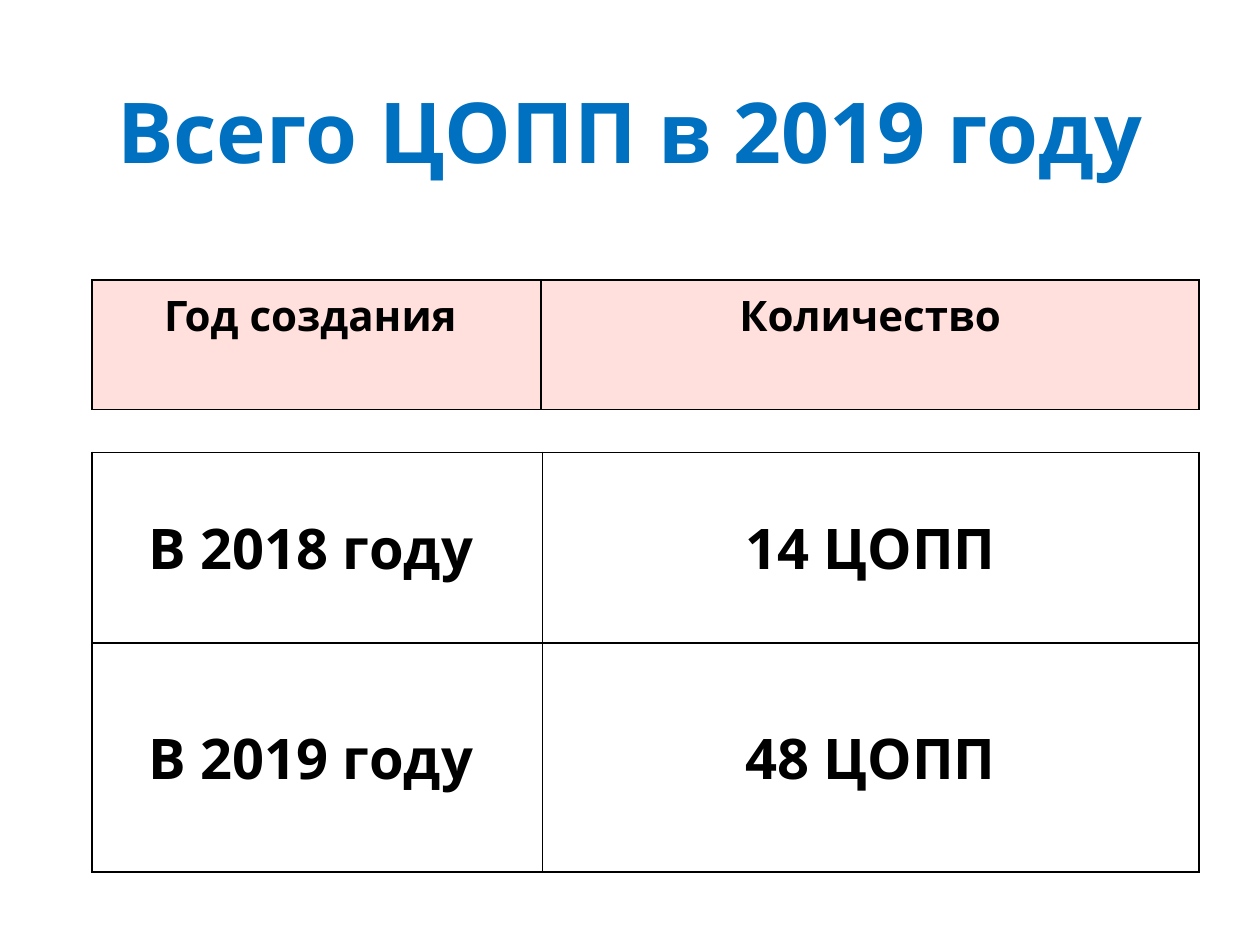
from lxml import etree
from pptx import Presentation
from pptx.dml.color import RGBColor
from pptx.enum.text import MSO_ANCHOR, PP_ALIGN
from pptx.oxml.ns import qn
from pptx.util import Cm, Pt

CENTER = PP_ALIGN.CENTER
TOP = MSO_ANCHOR.TOP
MIDDLE = MSO_ANCHOR.MIDDLE

FONT = "Open Sans"
COLORS = {"title": "0070C0", "text": "000000", "border": "000000",
          "header": "FFE0DC", "body": "FFFFFF"}
LEFT = Cm(1.85)
YEAR_MARGIN_RIGHT = Cm(0.5)


def rgb(name):
    return RGBColor.from_string(COLORS[name])


def write_text(frame, text, size, color):
    paragraph = frame.paragraphs[0]
    paragraph.text = text
    paragraph.alignment = CENTER
    font = paragraph.font
    font.name, font.size, font.bold = FONT, Pt(size), True
    font.color.rgb = rgb(color)


def add_title(slide, text):
    title = slide.shapes.add_textbox(LEFT, Cm(0.5), Cm(21.7), Cm(4.22))
    frame = title.text_frame
    frame.word_wrap = True
    frame.vertical_anchor = MIDDLE
    frame.margin_left = frame.margin_right = Cm(0.15)
    frame.margin_top = frame.margin_bottom = Cm(0.15)
    write_text(frame, text, 48, "title")


def add_borders(cell):
    """Draw a 1 pt line on each side; lines must precede the fill in the XML."""
    properties = cell._tc.get_or_add_tcPr()
    for position, side in enumerate(("lnL", "lnR", "lnT", "lnB")):
        line = etree.Element(qn(f"a:{side}"), w=str(Pt(1)))
        fill = etree.SubElement(line, qn("a:solidFill"))
        etree.SubElement(fill, qn("a:srgbClr"), val=COLORS["border"])
        properties.insert(position, line)


def add_grid(slide, top, widths, heights, rows, size, fill, anchor):
    """Add a bordered table with one fill; widths and heights are in cm."""
    table = slide.shapes.add_table(
        len(rows), len(widths), LEFT, Cm(top), Cm(sum(widths)), Cm(sum(heights))
    ).table
    table.first_row = table.horz_banding = False
    for column, width in zip(table.columns, widths):
        column.width = Cm(width)
    for row, height, texts in zip(table.rows, heights, rows):
        row.height = Cm(height)
        for cell, text in zip(row.cells, texts):
            cell.vertical_anchor = anchor
            cell.fill.solid()
            cell.fill.fore_color.rgb = rgb(fill)
            add_borders(cell)
            write_text(cell.text_frame, text, size, "text")
        row.cells[0].margin_right = YEAR_MARGIN_RIGHT


def main():
    deck = Presentation()
    deck.slide_width, deck.slide_height = Cm(25.4), Cm(19.05)
    slide = deck.slides.add_slide(deck.slide_layouts[6])

    add_title(slide, "Всего ЦОПП в 2019 году")
    add_grid(slide, 9.12, (9.09, 13.23), (3.84, 4.62),
             (("В 2018 году", "14 ЦОПП"), ("В 2019 году", "48 ЦОПП")),
             32, "body", MIDDLE)
    add_grid(slide, 5.64, (9.06, 13.26), (2.62,),
             (("Год создания", "Количество"),),
             24, "header", TOP)
    deck.save("out.pptx")


if __name__ == "__main__":
    main()
